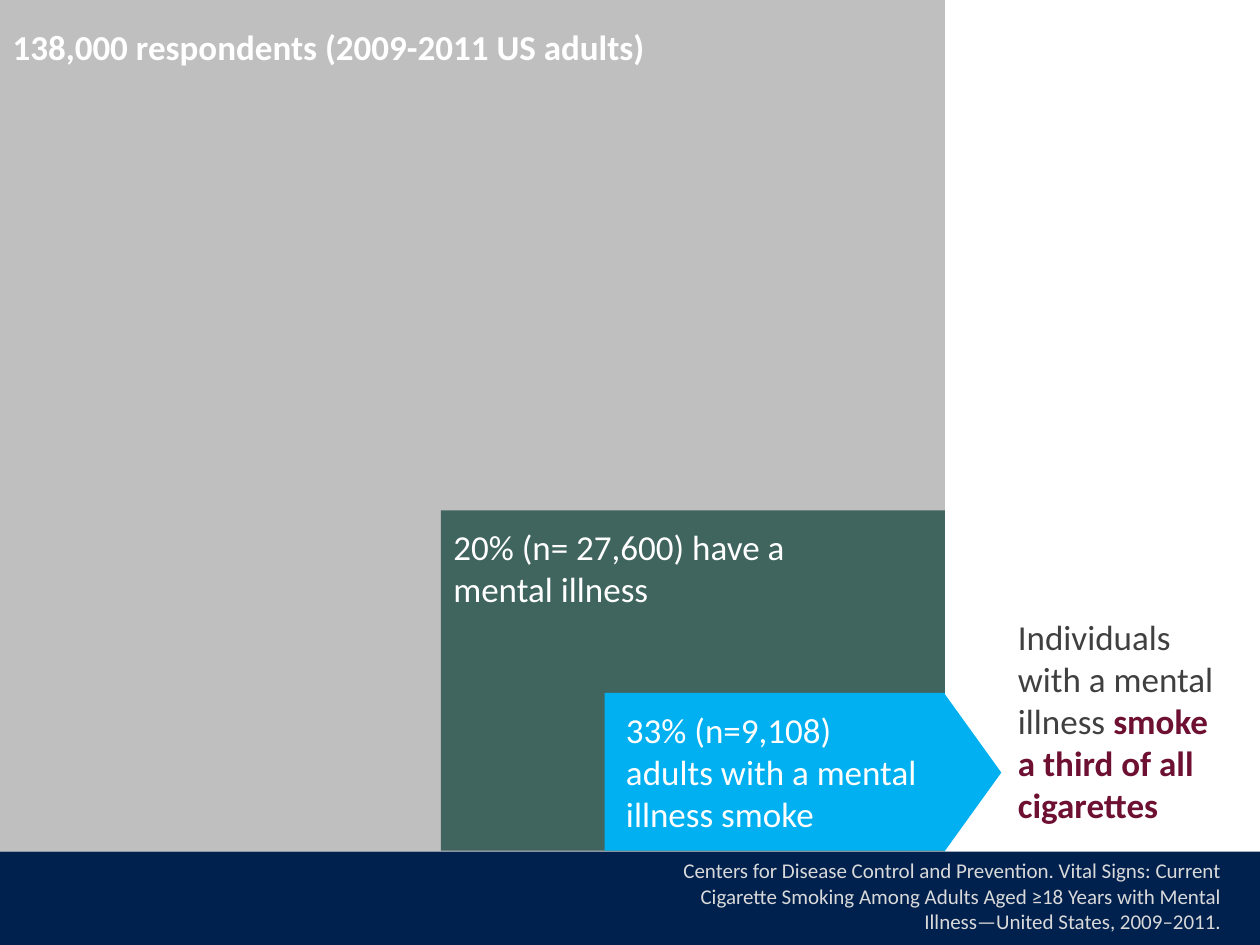
from dataclasses import dataclass

from pptx import Presentation
from pptx import util as u
from pptx.dml.color import RGBColor
from pptx.enum import shapes, text


@dataclass(frozen=True)
class Theme:
    font: str = "Calibri"
    body_size: int = 20
    source_size: int = 12
    white: str = "FFFFFF"
    population: str = "BFBFBF"
    illness: str = "40645E"
    smokers: str = "00B0F0"
    footer: str = "00204E"
    source: str = "D9D9D9"
    body: str = "404040"
    emphasis: str = "6E1031"


@dataclass(frozen=True)
class Box:
    """Position and size in centimetres."""
    left: float
    top: float
    width: float
    height: float


@dataclass(frozen=True)
class Block:
    box: Box
    fill: str
    kind: shapes.MSO_SHAPE = shapes.MSO_SHAPE.RECTANGLE
    rotation: float = 0


@dataclass(frozen=True)
class Run:
    words: str
    color: str
    size: int
    bold: bool = False


@dataclass(frozen=True)
class Label:
    box: Box
    runs: tuple[Run, ...]
    align: text.PP_ALIGN = text.PP_ALIGN.LEFT


THEME = Theme()
RIGHT_EDGE = 19.05
FOOTER_TOP = 17.17
BLOCK_BOTTOM = 17.15


def corner_box(width: float, height: float) -> Box:
    """Box nested in the bottom right corner of the population block."""
    return Box(RIGHT_EDGE - width, BLOCK_BOTTOM - height, width, height)


BLOCKS = (
    Block(Box(-0.43, -0.25, RIGHT_EDGE + 0.43, FOOTER_TOP + 0.25), THEME.population),
    Block(corner_box(10.16, 6.86), THEME.illness),
    Block(Box(-0.43, FOOTER_TOP, 26.47, 2.31), THEME.footer),
    Block(Box(17.45, 14.43, 3.18, 2.29), THEME.smokers, shapes.MSO_SHAPE.DIAMOND, 90),
    Block(corner_box(6.86, 3.18), THEME.smokers),
)

TITLE = Label(
    Box(0, 0.38, RIGHT_EDGE, 1.12),
    (Run("138,000 respondents (2009-2011 US adults)", THEME.white, THEME.body_size, True),),
)

LABELS = (
    Label(
        Box(8.89, 10.46, 8.79, 1.96),
        (Run("20% (n= 27,600) have a mental illness", THEME.white, THEME.body_size),),
    ),
    Label(
        Box(12.8, FOOTER_TOP, 12.07, 1.8),
        (Run("Centers for Disease Control and Prevention. Vital Signs: Current Cigarette "
             "Smoking Among Adults Aged ≥18 Years with Mental Illness—United States, "
             "2009–2011.", THEME.source, THEME.source_size),),
        text.PP_ALIGN.RIGHT,
    ),
    Label(
        Box(20.27, 12.29, 4.6, 4.52),
        (Run("Individuals with a mental illness ", THEME.body, THEME.body_size),
         Run("smoke a third of all cigarettes", THEME.emphasis, THEME.body_size, True)),
    ),
    Label(
        Box(12.37, 14.15, 6.46, 2.82),
        (Run("33% (n=9,108) adults with a mental illness smoke", THEME.white, THEME.body_size),),
    ),
)


def lengths(box: Box) -> tuple[u.Length, ...]:
    return u.Cm(box.left), u.Cm(box.top), u.Cm(box.width), u.Cm(box.height)


def draw_block(slide, block: Block) -> None:
    shape = slide.shapes.add_shape(block.kind, *lengths(block.box))
    shape.rotation = block.rotation
    shape.shadow.inherit = False
    shape.fill.solid()
    shape.fill.fore_color.rgb = RGBColor.from_string(block.fill)
    shape.line.fill.background()


def write_label(shape, label: Label) -> None:
    frame = shape.text_frame
    frame.word_wrap = True
    frame.auto_size = text.MSO_AUTO_SIZE.SHAPE_TO_FIT_TEXT
    frame.vertical_anchor = text.MSO_ANCHOR.TOP
    paragraph = frame.paragraphs[0]
    paragraph.alignment = label.align
    for part in label.runs:
        run = paragraph.add_run()
        run.text = part.words
        run.font.name = THEME.font
        run.font.size = u.Pt(part.size)
        run.font.bold = part.bold
        run.font.color.rgb = RGBColor.from_string(part.color)


def place_title(slide, label: Label) -> None:
    """Fill the title placeholder and bring it in front of the blocks."""
    title = slide.shapes.title
    title.left, title.top, title.width, title.height = lengths(label.box)
    write_label(title, label)
    title.element.getparent().append(title.element)


def main() -> None:
    presentation = Presentation()
    presentation.slide_width = u.Cm(25.4)
    presentation.slide_height = u.Cm(19.05)
    slide = presentation.slides.add_slide(presentation.slide_layouts.get_by_name("Title Only"))
    for block in BLOCKS:
        draw_block(slide, block)
    place_title(slide, TITLE)
    for label in LABELS:
        write_label(slide.shapes.add_textbox(*lengths(label.box)), label)
    presentation.save("out.pptx")


if __name__ == "__main__":
    main()
